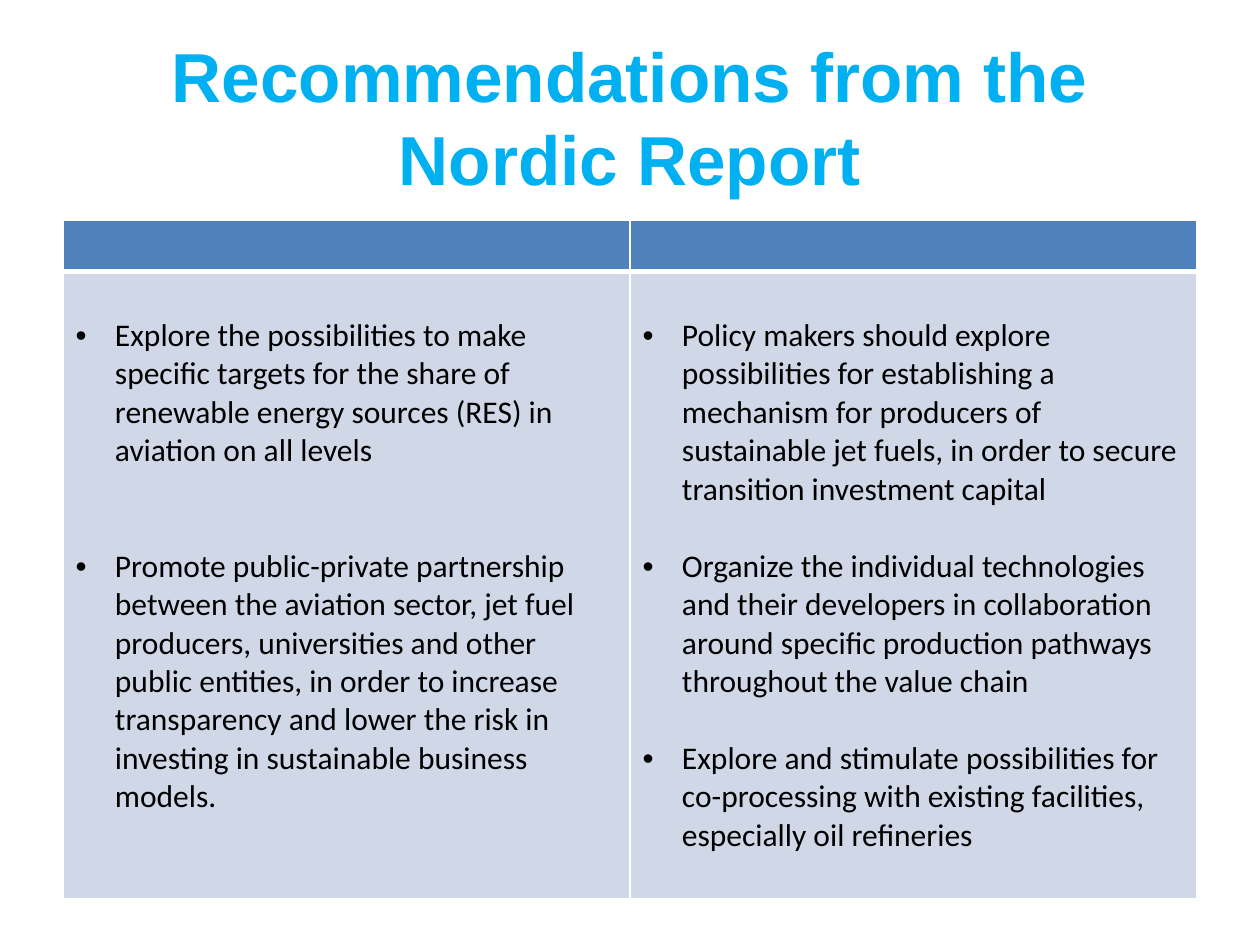
import lxml.etree
import pptx
import pptx.enum.text
import pptx.oxml.ns
import pptx.util

Pt = pptx.util.Pt
qn = pptx.oxml.ns.qn
Align = pptx.enum.text.PP_ALIGN
Anchor = pptx.enum.text.MSO_ANCHOR

COLORS = {"title": "00B0F0", "head": "4F81BD", "body": "D0D8E8",
          "line": "FFFFFF", "text": "000000"}
LEFT = ["Explore the possibilities to make specific targets for the share of "
        "renewable energy sources (RES) in aviation on all levels",
        "Promote public-private partnership between the aviation sector, jet fuel "
        "producers, universities and other public entities, in order to increase "
        "transparency and lower the risk in investing in sustainable business models."]
RIGHT = ["Policy makers should explore possibilities for establishing a mechanism "
         "for producers of sustainable jet fuels, in order to secure transition "
         "investment capital",
         "Organize the individual technologies and their developers in collaboration "
         "around specific production pathways throughout the value chain",
         "Explore and stimulate possibilities for co-processing with existing "
         "facilities, especially oil refineries"]


def color(name):
    return pptx.dml.color.RGBColor.from_string(COLORS[name])


def write(para, text, font="Calibri", size=18, fill="text", bold=False,
          align=Align.LEFT, lead=None, gap=0, indent=0):
    para.alignment = align
    para.space_before = Pt(gap)
    if lead:
        para.line_spacing = Pt(lead)
    if indent:
        props = para._p.get_or_add_pPr()
        props.set("marL", str(Pt(indent)))
        props.set("indent", str(-Pt(indent)))
        lxml.etree.SubElement(props, qn("a:buFont"), typeface="Arial")
        lxml.etree.SubElement(props, qn("a:buChar"), char="•")
    run = para.add_run()
    run.text = text
    run.font.name = font
    run.font.size = Pt(size)
    run.font.bold = bold
    run.font.color.rgb = color(fill)


class Deck:
    line = 22
    indent = 22.5

    def __init__(self, width, height):
        self.show = pptx.Presentation()
        self.show.slide_width = Pt(width)
        self.show.slide_height = Pt(height)
        self.slide = self.show.slides.add_slide(self.show.slide_layouts[6])

    def title(self, text, left, top, width, height):
        frame = self.slide.shapes.add_textbox(
            Pt(left), Pt(top), Pt(width), Pt(height)).text_frame
        frame.word_wrap = True
        frame.vertical_anchor = Anchor.MIDDLE
        write(frame.paragraphs[0], text, font="Arial", size=39.6, fill="title",
              bold=True, align=Align.CENTER, lead=47.4)

    def table(self, left, top, width, rows, cols):
        grid = self.slide.shapes.add_table(
            len(rows), cols, Pt(left), Pt(top), Pt(width), Pt(sum(rows))).table
        for row, height in zip(grid.rows, rows):
            row.height = Pt(height)
        for col in grid.columns:
            col.width = Pt(width / cols)
        for index in range(cols):
            self.cell(grid.cell(0, index), "head", bottom=3)
            self.cell(grid.cell(1, index), "body", top=3)
        return grid

    def cell(self, cell, fill, top=1, bottom=1):
        props = cell._tc.get_or_add_tcPr()
        for side, width in (("L", 1), ("R", 1), ("T", top), ("B", bottom)):
            edge = lxml.etree.SubElement(props, qn("a:ln" + side), w=str(Pt(width)))
            solid = lxml.etree.SubElement(edge, qn("a:solidFill"))
            lxml.etree.SubElement(solid, qn("a:srgbClr"), val=COLORS["line"])
        cell.fill.solid()
        cell.fill.fore_color.rgb = color(fill)

    def bullets(self, cell, items, lines):
        cell.margin_top = Pt(3.6 + self.line)
        frame = cell.text_frame
        for index, item in enumerate(items):
            para = frame.add_paragraph() if index else frame.paragraphs[0]
            write(para, item, gap=lines * self.line if index else 0,
                  indent=self.indent)


def main():
    deck = Deck(720, 540)
    deck.title("Recommendations from the Nordic Report", 36, 21.6, 648, 90)
    grid = deck.table(36, 126, 648, [29.2, 358.5], 2)
    deck.bullets(grid.cell(1, 0), LEFT, 2)
    deck.bullets(grid.cell(1, 1), RIGHT, 1)
    deck.show.save("out.pptx")


if __name__ == "__main__":
    main()
